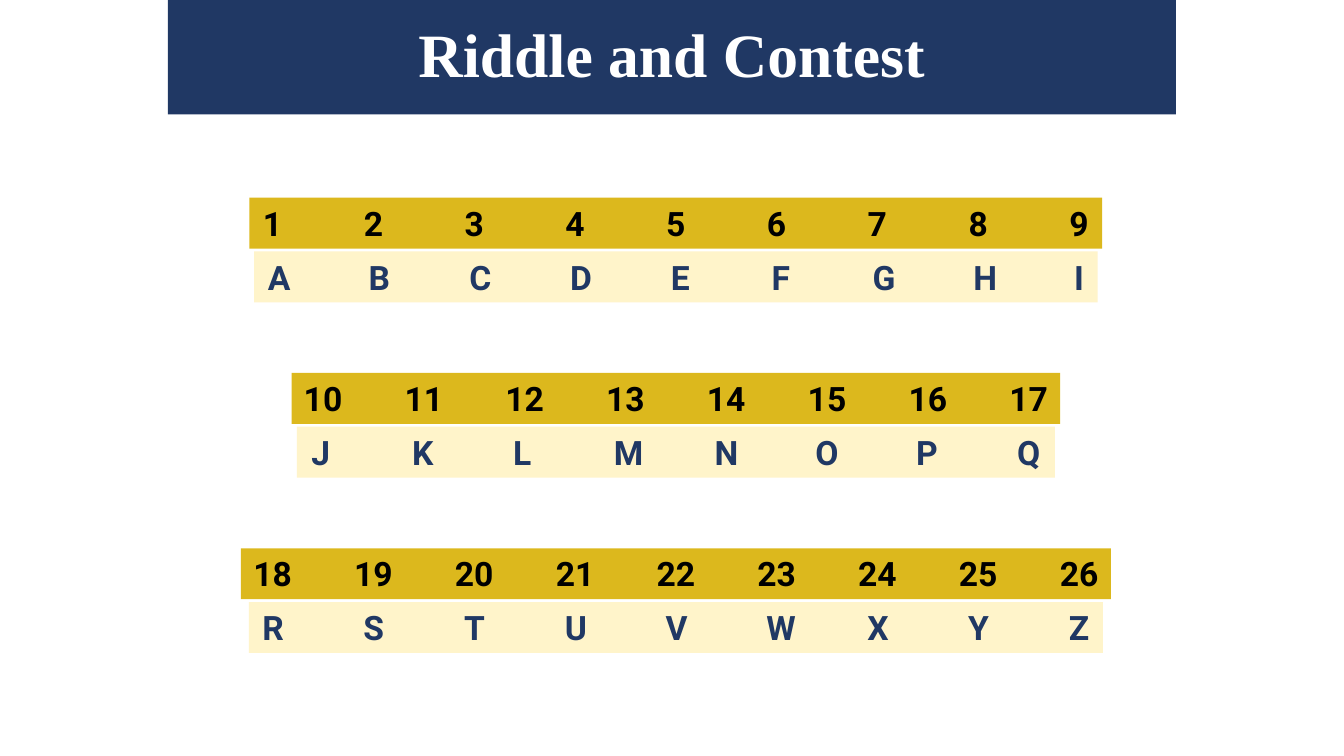
from dataclasses import dataclass

from lxml.etree import SubElement
from pptx import Presentation
from pptx.dml.color import RGBColor
from pptx.enum.shapes import MSO_SHAPE as Shape
from pptx.enum.text import MSO_ANCHOR as Anchor, MSO_AUTO_SIZE as AutoSize, PP_ALIGN as Align
from pptx.oxml.ns import qn
from pptx.util import Pt


@dataclass(frozen=True)
class Theme:
    navy: RGBColor = RGBColor.from_string("203864")
    gold: RGBColor = RGBColor.from_string("D9B105")
    cream: RGBColor = RGBColor.from_string("FFF3C5")
    white: RGBColor = RGBColor.from_string("FFFFFF")
    black: RGBColor = RGBColor.from_string("000000")
    title_font: str = "Times New Roman"
    code_font: str = "Roboto"
    title_size: Pt = Pt(44)
    code_size: Pt = Pt(24)


theme = Theme()


def style(para, font, size, color):
    para.alignment = Align.CENTER
    para.font.name = font
    para.font.size = size
    para.font.bold = True
    para.font.color.rgb = color


def add_band(page, top, width, entries, fill, color):
    """Add a centred, slightly transparent band of entries at one-inch tab stops."""
    center, height, tab_step = 482.75, 36.35, 72
    band = page.shapes.add_shape(
        Shape.RECTANGLE, Pt(center - width / 2), Pt(top), Pt(width), Pt(height))
    band.shadow.inherit = False
    band.line.fill.background()
    band.fill.solid()
    band.fill.fore_color.rgb = fill
    fill_color = band.element.spPr.find(qn("a:solidFill")).find(qn("a:srgbClr"))
    SubElement(fill_color, qn("a:alpha"), val="90000")
    frame = band.text_frame
    frame.word_wrap = False
    frame.auto_size = AutoSize.SHAPE_TO_FIT_TEXT
    frame.vertical_anchor = Anchor.TOP
    frame.text = "\t".join(entries)
    para = frame.paragraphs[0]
    para.alignment = Align.CENTER
    tabs = SubElement(para._p.find(qn("a:pPr")), qn("a:tabLst"))
    for stop in range(1, len(entries)):
        SubElement(tabs, qn("a:tab"), pos=str(Pt(stop * tab_step)), algn="l")
    style(para, theme.code_font, theme.code_size, color)


deck = Presentation()
deck.slide_width, deck.slide_height = Pt(960), Pt(540)
page = deck.slides.add_slide(deck.slide_layouts[5])

title = page.shapes.title
title.left, title.top, title.width, title.height = Pt(120), Pt(0), Pt(720), Pt(81.75)
title.fill.solid()
title.fill.fore_color.rgb = theme.navy
title.text_frame.text = "Riddle and Contest"
title.text_frame.vertical_anchor = Anchor.MIDDLE
heading = title.text_frame.paragraphs[0]
heading.line_spacing = 0.9
style(heading, theme.title_font, theme.title_size, theme.white)

# Letters of each group, with the widths of its number and letter bands
groups = [("ABCDEFGHI", 609, 602.5), ("JKLMNOPQ", 549, 541.5), ("RSTUVWXYZ", 621.5, 610)]
first_top, group_step, letter_offset = 141.25, 125.2, 38.4
first_number = 1
for index, (letters, number_width, letter_width) in enumerate(groups):
    top = first_top + index * group_step
    numbers = [str(number) for number in range(first_number, first_number + len(letters))]
    add_band(page, top, number_width, numbers, theme.gold, theme.black)
    add_band(page, top + letter_offset, letter_width, letters, theme.cream, theme.navy)
    first_number += len(letters)

deck.save("out.pptx")
